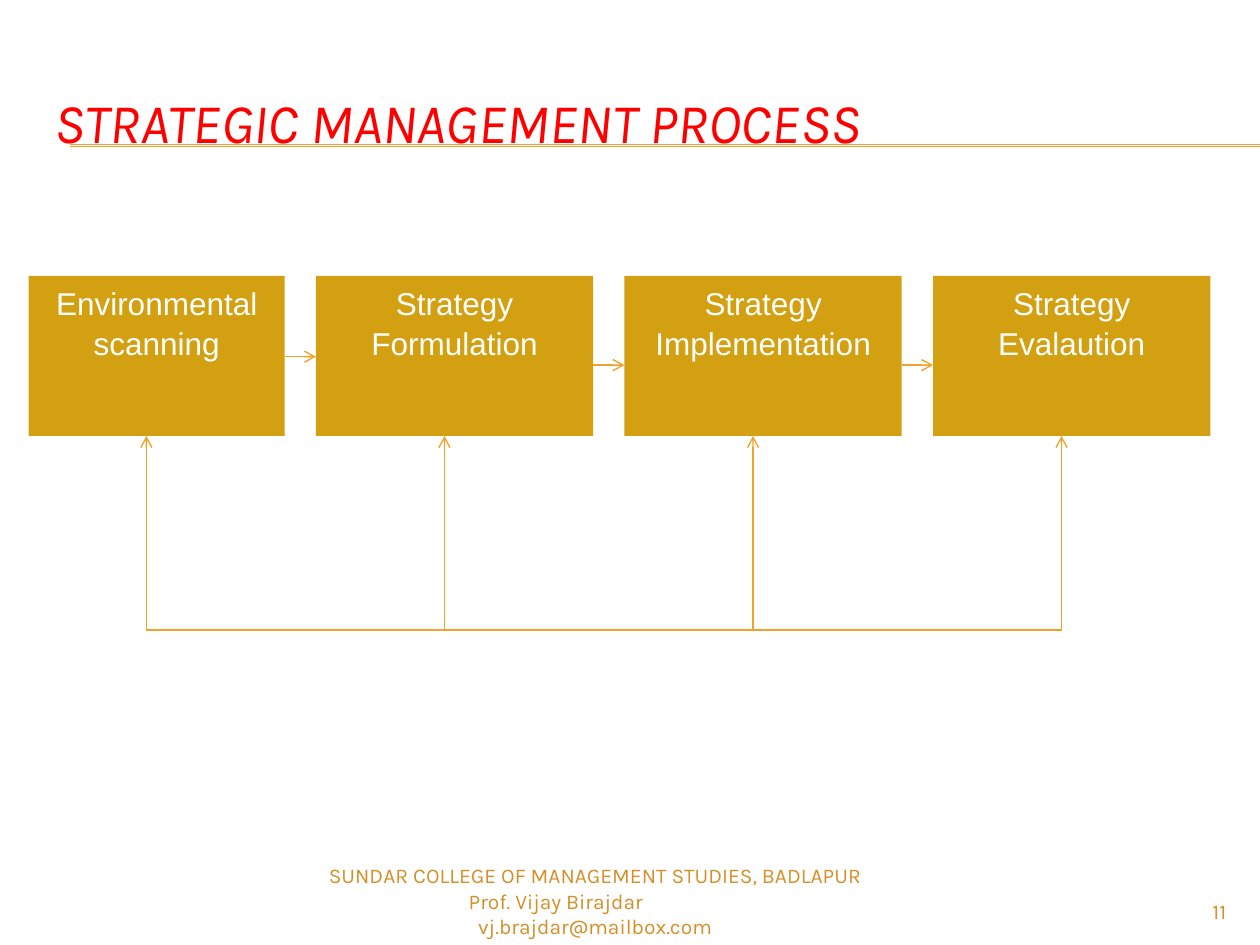
import pptx
import pptx.dml.color
import pptx.enum.shapes
import pptx.enum.text
import pptx.oxml
import pptx.util
from pptx.oxml.ns import nsdecls

Cm, Pt = pptx.util.Cm, pptx.util.Pt
ALIGN = pptx.enum.text.PP_ALIGN
ANCHOR = pptx.enum.text.MSO_ANCHOR

TITLE = "STRATEGIC MANAGEMENT PROCESS"
FOOTER = [
    "SUNDAR COLLEGE OF MANAGEMENT STUDIES, BADLAPUR",
    "Prof. Vijay Birajdar",
    "vj.brajdar@mailbox.com",
]
PAGE = "11"

# label, box width, feedback arrow offset from the box's left edge, height of the arrow to the next box
STAGES = [
    ("Environmental scanning", 5.16, 2.37, 7.19),
    ("Strategy Formulation", 5.59, 2.59, 7.36),
    ("Strategy Implementation", 5.59, 2.59, 7.36),
    ("Strategy Evalaution", 5.59, 2.59, None),
]
FIRST_LEFT, GAP = 0.58, 0.63
BOX_TOP, BOX_HEIGHT = 5.56, 3.23
BOX_BOTTOM = BOX_TOP + BOX_HEIGHT
FEEDBACK_Y = 12.7
RULE_LEFT, RULE_RIGHT, RULE_YS = 1.42, 25.4, (2.92, 2.95)
PROFESSOR_INDENT = 9.2

GOLD, ORANGE = "D2A010", "F0A22E"
TITLE_FONT = {"name": "Karla", "size": Pt(32), "italic": True}
FOOTER_FONT = {"name": "Karla", "size": Pt(12)}
STAGE_FONT = {"name": "Arial", "size": Pt(18)}


def rgb(value):
    return pptx.dml.color.RGBColor.from_string(value)


def write(shape, lines, font, color, align, anchor=ANCHOR.TOP):
    frame = shape.text_frame
    frame.word_wrap = True
    frame.vertical_anchor = anchor
    frame.text = "\n".join(lines)
    for paragraph in frame.paragraphs:
        paragraph.alignment = align
        for run in paragraph.runs:
            for attribute, value in font.items():
                setattr(run.font, attribute, value)
            run.font.color.rgb = rgb(color)
    return frame


def add_text(slide, place, *text):
    return write(slide.shapes.add_textbox(*map(Cm, place)), *text)


def add_line(slide, start, end, width=0.79, arrow=False):
    line = slide.shapes.add_connector(
        pptx.enum.shapes.MSO_CONNECTOR.STRAIGHT, *map(Cm, start + end))
    line.line.color.rgb = rgb(ORANGE)
    line.line.width = Pt(width)
    properties = line._element.spPr
    if arrow:
        properties.find(pptx.oxml.ns.qn("a:ln")).append(
            pptx.oxml.parse_xml(f'<a:tailEnd {nsdecls("a")} type="arrow"/>'))
    properties.append(pptx.oxml.parse_xml(f'<a:effectLst {nsdecls("a")}/>'))


def add_stage(slide, label, left, width):
    box = slide.shapes.add_shape(
        pptx.enum.shapes.MSO_SHAPE.RECTANGLE,
        *map(Cm, (left, BOX_TOP, width, BOX_HEIGHT)))
    box.shadow.inherit = False
    box.fill.solid()
    box.fill.fore_color.rgb = rgb(GOLD)
    box.line.fill.background()
    frame = write(box, [label], STAGE_FONT, "FFFFFF", ALIGN.CENTER)
    frame.paragraphs[0].line_spacing = 1.05


def add_process(slide):
    left = FIRST_LEFT
    feedback_xs = []
    for label, width, offset, next_y in STAGES:
        add_stage(slide, label, left, width)
        feedback_xs.append(left + offset)
        right = left + width
        left = right + GAP
        if next_y is not None:
            add_line(slide, (right, next_y), (left, next_y), arrow=True)
    for x in feedback_xs:
        add_line(slide, (x, FEEDBACK_Y), (x, BOX_BOTTOM), arrow=True)
    add_line(slide, (feedback_xs[0], FEEDBACK_Y), (feedback_xs[-1], FEEDBACK_Y))


def main():
    deck = pptx.Presentation()
    deck.slide_width, deck.slide_height = Cm(25.4), Cm(19.05)
    slide = deck.slides.add_slide(deck.slide_layouts[6])

    for y in RULE_YS:
        add_line(slide, (RULE_LEFT, y), (RULE_RIGHT, y), width=0.75)
    add_text(slide, (0.84, 1.27, 24.13, 2.34), [TITLE], TITLE_FONT,
             "FF0000", ALIGN.LEFT, ANCHOR.MIDDLE)
    footer = add_text(slide, (0, 17.27, 24, 0.99), FOOTER, FOOTER_FONT,
                      "D48F29", ALIGN.CENTER)
    professor = footer.paragraphs[1]
    professor.alignment = ALIGN.LEFT
    professor._p.get_or_add_pPr().set("marL", str(Cm(PROFESSOR_INDENT)))
    add_text(slide, (22.86, 17.98, 2.11, 0.69), [PAGE], FOOTER_FONT,
             "D48F29", ALIGN.RIGHT)
    add_process(slide)

    deck.save("out.pptx")


if __name__ == "__main__":
    main()
